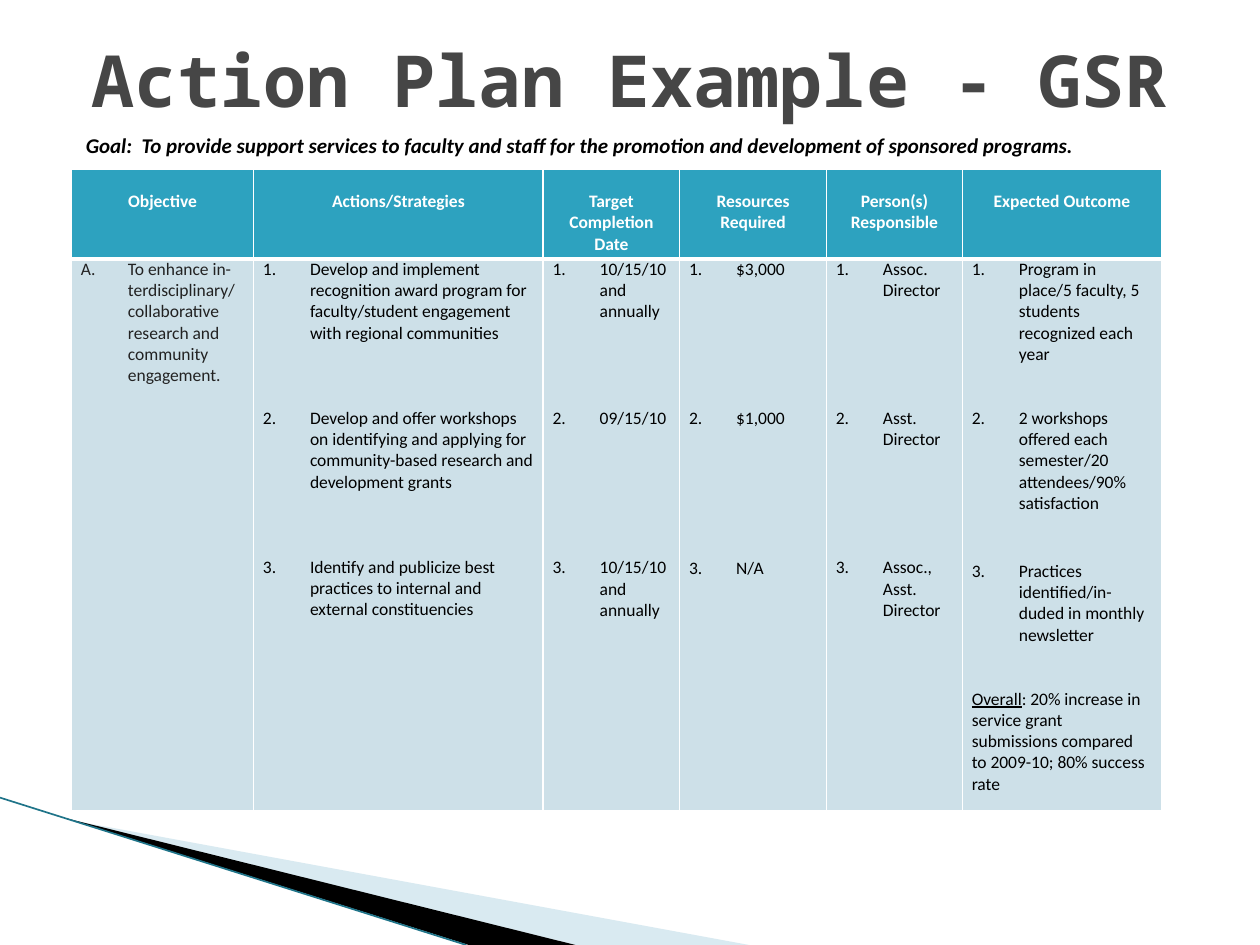
from lxml import etree
from pptx import Presentation
from pptx import util as u
from pptx.dml.color import RGBColor
from pptx.enum import shapes, text
from pptx.oxml.ns import qn

COLORS = {
    "title": "464646", "black": "000000", "white": "FFFFFF", "header": "2DA2BF",
    "body": "CDE0E8", "objective": "222222", "wave": "A0CBDC", "edge": "1F7489",
}
LINE_HEIGHT = 12.2

COLUMNS = [
    ("Objective", 3.67), ("Actions/Strategies", 5.84),
    ("Target\nCompletion\nDate", 2.75), ("Resources Required", 2.96),
    ("Person(s) Responsible", 2.74), ("Expected Outcome", 4.01),
]
OBJECTIVE = "To enhance in- terdisciplinary/ collaborative research and community engagement."
OVERALL = ("Overall", ": 20% increase in service grant submissions compared to 2009-10; 80% success rate")
ITEMS = [
    [("Develop and implement recognition award program for faculty/student engagement "
      "with regional communities", 0),
     ("Develop and offer workshops on identifying and applying for community-based "
      "research and development grants", 3),
     ("Identify and publicize best practices to internal and external constituencies", 3)],
    [("10/15/10 and annually", 0), ("09/15/10", 4), ("10/15/10 and annually", 6)],
    [("$3,000", 0), ("$1,000", 6), ("N/A", 6)],
    [("Assoc. Director", 0), ("Asst. Director", 5), ("Assoc., Asst. Director", 5)],
    [("Program in place/5 faculty, 5 students recognized each year", 0),
     ("2 workshops offered each semester/20 attendees/90% satisfaction", 2),
     ("Practices identified/in-duded in monthly newsletter", 2.2)],
]


class Slide:
    font = "Calibri"

    def __init__(self, deck):
        self.page = deck.slides.add_slide(deck.slide_layouts[5])

    def color(self, name):
        return RGBColor.from_string(COLORS[name])

    def format(self, para, size, color, bold=False, italic=False, font=None):
        for span in para.runs:
            span.font.name = font or self.font
            span.font.size = u.Pt(size)
            span.font.bold = bold
            span.font.italic = italic
            span.font.color.rgb = self.color(color)

    def place(self, box, left, top, width, height):
        box.left, box.top, box.width, box.height = map(u.Cm, (left, top, width, height))

    def title(self, words, *bounds):
        box = self.page.shapes.title
        self.place(box, *bounds)
        frame = box.text_frame
        frame.text = words
        frame.vertical_anchor = text.MSO_ANCHOR.MIDDLE
        frame.auto_size = text.MSO_AUTO_SIZE.NONE
        frame.paragraphs[0].alignment = text.PP_ALIGN.CENTER
        self.format(frame.paragraphs[0], 41, "title", bold=True, font="Noto Sans Mono")

    def label(self, words, *bounds):
        box = self.page.shapes.add_textbox(*map(u.Cm, bounds))
        box.text_frame.word_wrap = True
        box.text_frame.text = words
        self.format(box.text_frame.paragraphs[0], 12, "black", bold=True, italic=True)

    def polygon(self, points, color, opacity=100):
        points = [(u.Cm(x), u.Cm(y)) for x, y in points]
        builder = self.page.shapes.build_freeform(*points[0])
        builder.add_line_segments(points[1:], close=True)
        shape = builder.convert_to_shape()
        shape.shadow.inherit = False
        shape.line.fill.background()
        shape.fill.solid()
        shape.fill.fore_color.rgb = self.color(color)
        if opacity < 100:
            hue = next(shape._element.spPr.iter(qn("a:srgbClr")))
            etree.SubElement(hue, qn("a:alpha"), val=str(opacity * 1000))

    def line(self, color, width, *ends):
        connector = self.page.shapes.add_connector(
            shapes.MSO_CONNECTOR.STRAIGHT, *map(u.Cm, ends))
        connector.line.color.rgb = self.color(color)
        connector.line.width = u.Pt(width)
        etree.SubElement(connector._element.spPr, qn("a:effectLst"))

    def table(self, left, top, widths, heights):
        frame = self.page.shapes.add_table(
            len(heights), len(widths), *map(u.Cm, (left, top, sum(widths), sum(heights))))
        for column, width in zip(frame.table.columns, widths):
            column.width = u.Cm(width)
        for row, height in zip(frame.table.rows, heights):
            row.height = u.Cm(height)
        return frame.table

    def cell(self, cell, fill, words, top_margin=0, bottom_border=1):
        cell.margin_left = cell.margin_right = u.Cm(0.19)
        cell.margin_top, cell.margin_bottom = u.Pt(top_margin), 0
        for side, width in zip("LRTB", (1, 1, 1, bottom_border)):
            border = etree.SubElement(
                cell._tc.get_or_add_tcPr(), qn("a:ln" + side), w=str(u.Pt(width)))
            paint = etree.SubElement(border, qn("a:solidFill"))
            etree.SubElement(paint, qn("a:srgbClr"), val=COLORS["white"])
        cell.fill.solid()
        cell.fill.fore_color.rgb = self.color(fill)
        cell.text_frame.text = words
        return cell.text_frame.paragraphs

    def header(self, cell, words):
        for para in self.cell(cell, "header", words, LINE_HEIGHT, bottom_border=3):
            para.alignment = text.PP_ALIGN.CENTER
            self.format(para, 10, "white", bold=True)

    def numbered(self, cell, items, color="black", scheme="arabicPeriod"):
        paras = self.cell(cell, "body", "\n".join(words for words, gap in items))
        for number, (para, (words, gap)) in enumerate(zip(paras, items), 1):
            if gap:
                para.space_before = u.Pt(gap * LINE_HEIGHT)
            properties = para._p.get_or_add_pPr()
            properties.set("marL", str(u.Cm(0.95)))
            properties.set("indent", str(-u.Cm(0.95)))
            etree.SubElement(properties, qn("a:buFont"), typeface=self.font)
            etree.SubElement(properties, qn("a:buAutoNum"), type=scheme, startAt=str(number))
            self.format(para, 10, color)

    def summary(self, cell, lead, rest):
        para = cell.text_frame.add_paragraph()
        para.space_before = u.Pt(2 * LINE_HEIGHT)
        for words in (lead, rest):
            para.add_run().text = words
        self.format(para, 10, "black")
        para.runs[0].font.underline = True


def main():
    deck = Presentation()
    deck.slide_width, deck.slide_height = u.Cm(25.4), u.Cm(19.05)
    slide = Slide(deck)

    slide.polygon([(1.4, 16.53), (15.1, 19.05), (11.6, 19.05)], "wave", opacity=40)
    slide.polygon([(1.35, 16.5), (11.6, 19.05), (9.45, 19.05)], "black")
    slide.line("edge", 0.95, 0, 16.08, 9.4, 19.05)

    table = slide.table(1.44, 3.42, [width for name, width in COLUMNS], [1.8, 11.12])
    for index, (name, width) in enumerate(COLUMNS):
        slide.header(table.cell(0, index), name)
    slide.numbered(table.cell(1, 0), [(OBJECTIVE, 0)], "objective", "alphaUcPeriod")
    for index, items in enumerate(ITEMS, 1):
        slide.numbered(table.cell(1, index), items)
    slide.summary(table.cell(1, len(ITEMS)), *OVERALL)

    slide.title("Action Plan Example - GSR", 1.27, 0, 22.86, 3.18)
    slide.label("Goal:  To provide support services to faculty and staff for the promotion "
                "and development of sponsored programs.", 1.48, 2.54, 22.43, 0.77)
    deck.save("out.pptx")


if __name__ == "__main__":
    main()
